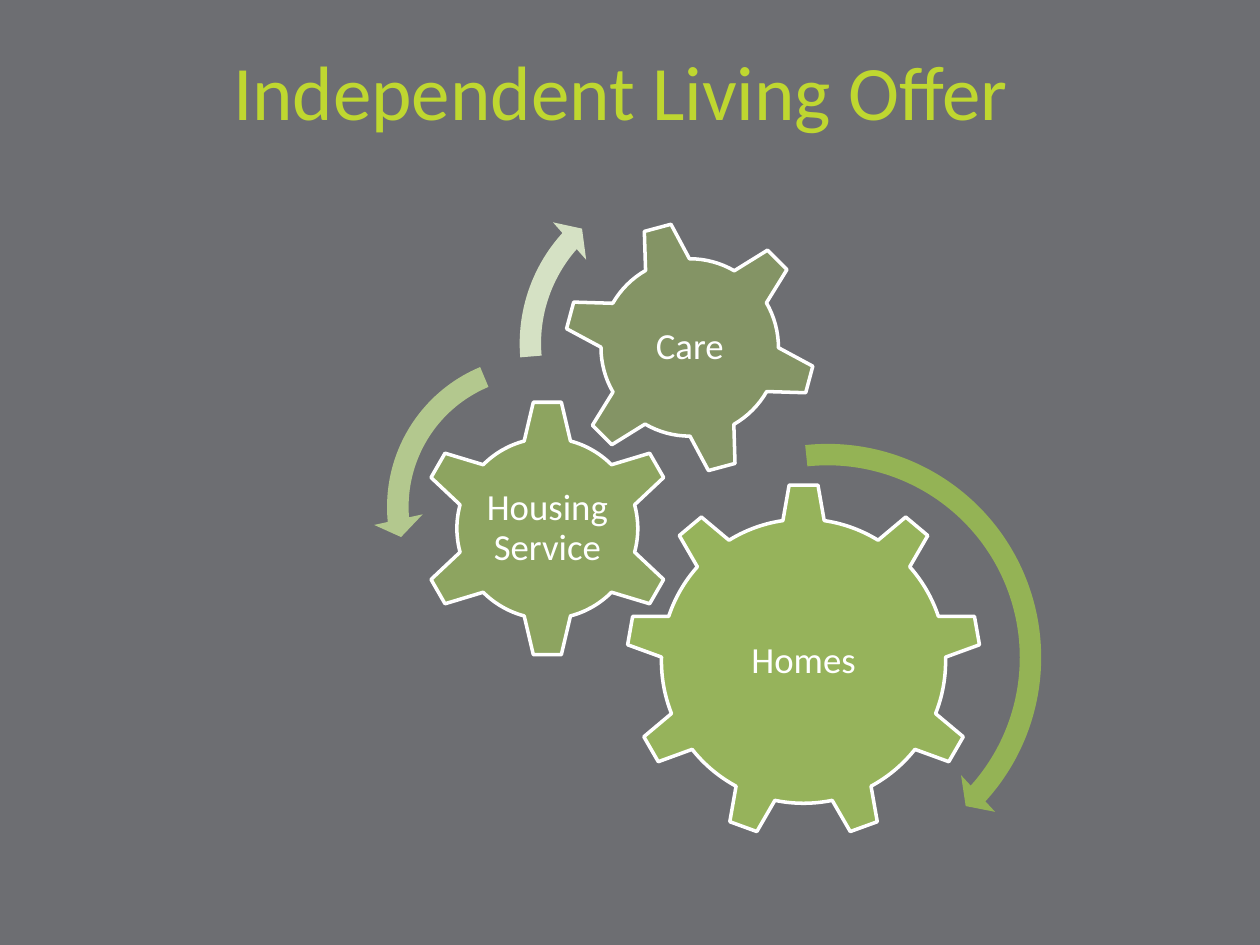
from dataclasses import dataclass

from lxml.etree import SubElement
from pptx import Presentation
from pptx.dml.color import RGBColor
from pptx.enum.shapes import MSO_SHAPE
from pptx.enum.text import MSO_ANCHOR, PP_ALIGN
from pptx.oxml.ns import qn
from pptx.util import Cm, Pt

COLORS = {
    "background": "6D6E72",
    "title": "BFD730",
    "gear": "9BBB59",
    "white": "FFFFFF",
    "homes_arrow": "94B355",
    "housing_arrow": "B3C88E",
    "care_arrow": "D5E1C4",
}
FONT = "Calibri"


@dataclass
class Gear:
    """Square gear with a label centred on it; lengths in cm."""
    label: str
    shape: MSO_SHAPE
    left: float
    top: float
    size: float
    label_width: float
    label_height: float
    opacity: int
    rotation: float = 0


@dataclass
class Arrow:
    """Curved arrow in a square frame; lengths in cm."""
    shape: MSO_SHAPE
    left: float
    top: float
    size: float
    color: str
    adjustments: tuple[float, ...]


GEARS = [
    Gear("Homes", MSO_SHAPE.GEAR_9, 12.62, 9.75, 7.16, 4.29, 3.68, 90),
    Gear("Housing Service", MSO_SHAPE.GEAR_6, 8.43, 8.05, 5.21, 2.59, 2.57, 70),
    Gear("Care", MSO_SHAPE.GEAR_6, 11.35, 4.45, 5.11, 2.87, 2.87, 50, 345),
]
ARROWS = [
    Arrow(MSO_SHAPE.CIRCULAR_ARROW, 12.09, 8.66, 9.19, "homes_arrow",
          (0.047, 2.99, 25.27, 158.382, 0.055)),
    Arrow(MSO_SHAPE.LEFT_CIRCULAR_ARROW, 7.52, 6.88, 6.68, "housing_arrow",
          (0.065, 4.3, 104.891, 148.378, 0.075)),
    Arrow(MSO_SHAPE.CIRCULAR_ARROW, 10.19, 3.33, 7.19, "care_arrow",
          (0.06, 3.941, 133.138, 105.082, 0.07)),
]


def rgb(name: str) -> RGBColor:
    return RGBColor.from_string(COLORS[name])


def write(tf, text: str, size: float, color: str) -> None:
    tf.text = text
    tf.word_wrap = True
    tf.vertical_anchor = MSO_ANCHOR.MIDDLE
    p = tf.paragraphs[0]
    p.alignment = PP_ALIGN.CENTER
    font = p.runs[0].font
    font.name, font.size = FONT, Pt(size)
    font.color.rgb = rgb(color)


def add_filled(s, item: Gear | Arrow, color: str):
    sp = s.shapes.add_shape(item.shape, Cm(item.left), Cm(item.top),
                            Cm(item.size), Cm(item.size))
    sp.shadow.inherit = False
    sp.fill.solid()
    sp.fill.fore_color.rgb = rgb(color)
    return sp


def add_gear(s, gear: Gear) -> None:
    sp = add_filled(s, gear, "gear")
    clr = sp.element.spPr.find(f"{qn('a:solidFill')}/{qn('a:srgbClr')}")
    SubElement(clr, qn("a:alpha"), val=str(gear.opacity * 1000))
    sp.line.color.rgb = rgb("white")
    sp.line.width = Pt(2)
    sp.rotation = gear.rotation


def add_label(s, gear: Gear) -> None:
    box = s.shapes.add_textbox(
        Cm(gear.left + (gear.size - gear.label_width) / 2),
        Cm(gear.top + (gear.size - gear.label_height) / 2),
        Cm(gear.label_width), Cm(gear.label_height))
    tf = box.text_frame
    tf.margin_left = tf.margin_right = tf.margin_top = tf.margin_bottom = Cm(0.07)
    write(tf, gear.label, 21, "white")
    tf.paragraphs[0].line_spacing = 0.9


def add_arrow(s, arrow: Arrow) -> None:
    sp = add_filled(s, arrow, arrow.color)
    sp.line.fill.background()
    for i, value in enumerate(arrow.adjustments):
        sp.adjustments[i] = value


def main() -> None:
    prs = Presentation()
    prs.slide_width, prs.slide_height = Cm(25.4), Cm(19.05)
    s = prs.slides.add_slide(prs.slide_layouts[5])
    s.background.fill.solid()
    s.background.fill.fore_color.rgb = rgb("background")

    title = s.shapes.title
    title.left, title.top = Cm(1.09), Cm(0.53)
    title.width, title.height = Cm(22.86), Cm(2.57)
    write(title.text_frame, "Independent Living Offer", 44, "title")

    for gear in GEARS:
        add_gear(s, gear)
        add_label(s, gear)
    for arrow in ARROWS:
        add_arrow(s, arrow)
    prs.save("out.pptx")


if __name__ == "__main__":
    main()
